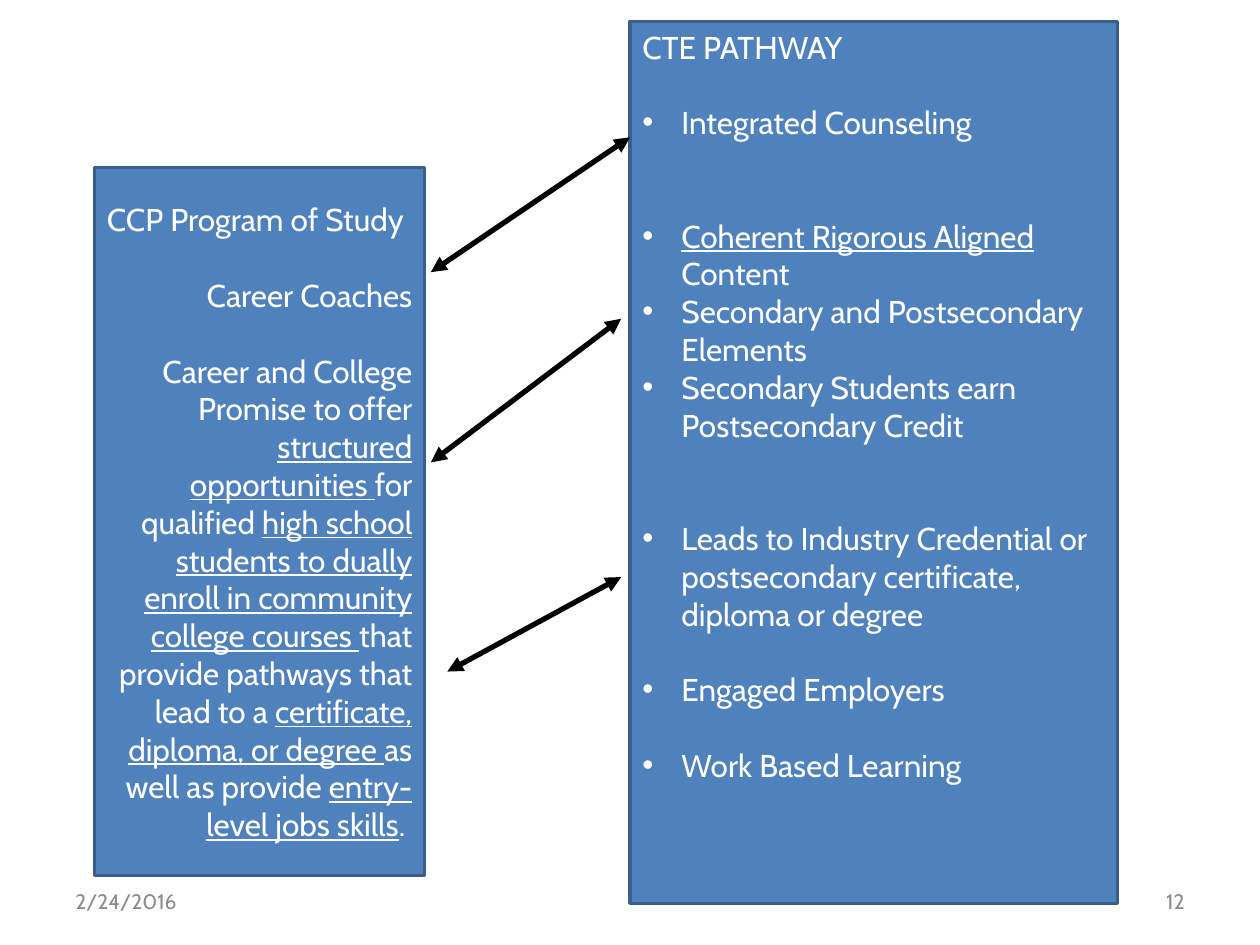
from dataclasses import dataclass

from lxml import etree
from pptx import Presentation
from pptx import util as u
from pptx.dml.color import RGBColor
from pptx.enum import shapes, text
from pptx.oxml import ns

PX = 9144  # EMU in one px, 100 px to the inch
LEFT, RIGHT = text.PP_ALIGN.LEFT, text.PP_ALIGN.RIGHT
TOP, MIDDLE = text.MSO_ANCHOR.TOP, text.MSO_ANCHOR.MIDDLE


@dataclass(frozen=True)
class Theme:
    font: str = "Cabin"
    panel: str = "4F81BD"
    border: str = "3A5F8C"
    panel_text: str = "FFFFFF"
    footer_text: str = "8C8C8C"
    arrow: str = "000000"
    body_size: int = 18
    footer_size: int = 12
    line_pitch: float = 21.6
    border_width: int = 2
    arrow_width: int = 3
    bullet_indent: int = 31


THEME = Theme()

# Each entry: blank lines above, spans of (wording, underlined)
PATHWAY_ITEMS = [
    (1, [("Integrated Counseling", False)]),
    (2, [("Coherent Rigorous Aligned ", True), ("Content", False)]),
    (0, [("Secondary and Postsecondary Elements", False)]),
    (0, [("Secondary Students earn Postsecondary Credit", False)]),
    (2, [("Leads to Industry Credential or postsecondary certificate, diploma or degree", False)]),
    (1, [("Engaged Employers", False)]),
    (1, [("Work Based Learning", False)]),
]
PROGRAM_ITEMS = [
    (1, [("Career Coaches", False)]),
    (1, [
        ("Career and College Promise to offer ", False),
        ("structured opportunities ", True),
        ("for qualified ", False),
        ("high school students to dually enroll in community college courses ", True),
        ("that provide pathways that lead to a ", False),
        ("certificate, diploma, or degree ", True),
        ("as well as provide ", False),
        ("entry-level jobs skills", True),
        (". ", False),
    ]),
]
ARROWS = [
    ((342, 216), (500, 109)),
    ((342, 367), (493, 253)),
    ((355, 533), (493, 458)),
]


def emu(*lengths):
    return [u.Emu(length * PX) for length in lengths]


def write_paragraph(para, spans, *, size, color, align=LEFT, gap=0, bullet=False):
    """Fill a paragraph; gap is the number of blank lines above it."""
    para.alignment = align
    if gap:
        para.space_before = u.Pt(gap * THEME.line_pitch)
    if bullet:
        indent = THEME.bullet_indent * PX
        props = para._p.get_or_add_pPr()
        props.set("marL", str(indent))
        props.set("indent", str(-indent))
        etree.SubElement(props, ns.qn("a:buFont"), typeface="Arial")
        etree.SubElement(props, ns.qn("a:buChar"), char="•")
    for wording, underlined in spans:
        span = para.add_run()
        span.text = wording
        span.font.name = THEME.font
        span.font.size = u.Pt(size)
        span.font.color.rgb = RGBColor.from_string(color)
        if underlined:
            span.font.underline = True


def add_panel(page, box, heading, items, *, anchor, align=LEFT, bullet=False):
    panel = page.shapes.add_shape(shapes.MSO_SHAPE.RECTANGLE, *emu(*box))
    panel.shadow.inherit = False
    panel.fill.solid()
    panel.fill.fore_color.rgb = RGBColor.from_string(THEME.panel)
    panel.line.color.rgb = RGBColor.from_string(THEME.border)
    panel.line.width = u.Pt(THEME.border_width)
    frame = panel.text_frame
    frame.word_wrap = True
    frame.vertical_anchor = anchor
    style = {"size": THEME.body_size, "color": THEME.panel_text}
    write_paragraph(frame.paragraphs[0], [(heading, False)], **style)
    for gap, spans in items:
        write_paragraph(frame.add_paragraph(), spans, align=align, gap=gap,
                        bullet=bullet, **style)


def add_footer(page, box, wording, align):
    frame = page.shapes.add_textbox(*emu(*box)).text_frame
    frame.word_wrap = True
    frame.vertical_anchor = MIDDLE
    write_paragraph(frame.paragraphs[0], [(wording, False)], align=align,
                    size=THEME.footer_size, color=THEME.footer_text)


def add_double_arrow(page, start, end):
    arrow = page.shapes.add_connector(
        shapes.MSO_CONNECTOR.STRAIGHT, *emu(*start, *end))
    arrow.line.color.rgb = RGBColor.from_string(THEME.arrow)
    arrow.line.width = u.Pt(THEME.arrow_width)
    props = arrow._element.spPr
    line = props.find(ns.qn("a:ln"))
    for tip in ("a:headEnd", "a:tailEnd"):
        etree.SubElement(line, ns.qn(tip), type="triangle")
    etree.SubElement(props, ns.qn("a:effectLst"))


def main():
    deck = Presentation()
    deck.slide_width, deck.slide_height = emu(1000, 750)
    page = deck.slides.add_slide(deck.slide_layouts.get_by_name("Blank"))
    add_panel(page, (500, 17, 387, 700), "CTE PATHWAY", PATHWAY_ITEMS,
              anchor=TOP, bullet=True)
    add_footer(page, (50, 695, 233, 40), "2/24/2016", LEFT)
    add_footer(page, (717, 695, 233, 40), "12", RIGHT)
    add_panel(page, (75, 133, 262, 562), "CCP Program of Study", PROGRAM_ITEMS,
              anchor=MIDDLE, align=RIGHT)
    for start, end in ARROWS:
        add_double_arrow(page, start, end)
    deck.save("out.pptx")


if __name__ == "__main__":
    main()
